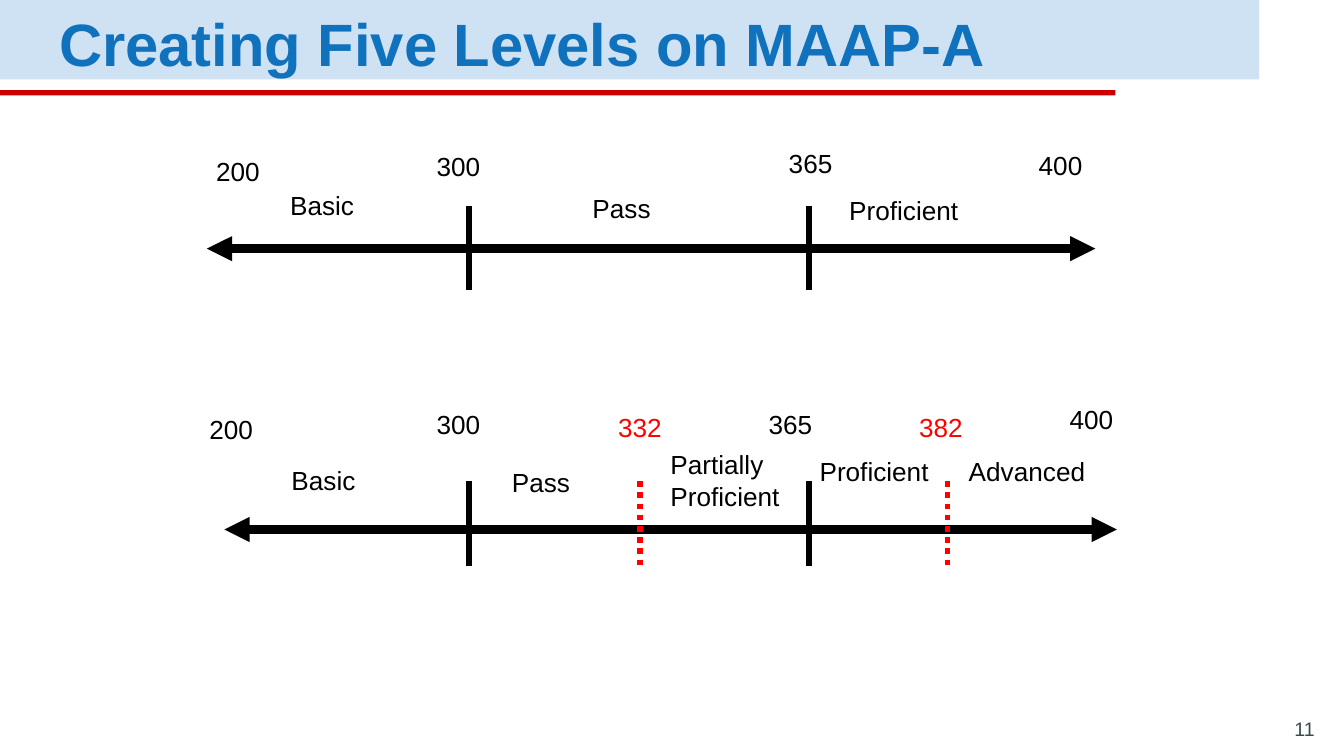
from lxml.etree import SubElement
from pptx import Presentation
from pptx.dml.color import RGBColor
from pptx.enum.dml import MSO_LINE
from pptx.enum.shapes import MSO_CONNECTOR, MSO_SHAPE
from pptx.enum.text import MSO_ANCHOR, MSO_AUTO_SIZE, PP_ALIGN
from pptx.oxml.ns import qn
from pptx.util import Emu, Pt

EMU_PER_PX = 9144
BLACK, RED = "000000", "FF0000"
LABEL_WIDTH, LABEL_HEIGHT = 91, 34
TICK_HEIGHT = 63

OLD_SCALE = {
    "axis": (154, 815, 185),
    "tick_top": 153,
    "ticks": [(349, BLACK), (602, BLACK)],
    "levels": [("Basic", 206, 136, 91), ("Pass", 431, 138, 91), ("Proficient", 622, 140, 119)],
    "scores": [("200", 151, 111, BLACK), ("300", 315, 107, BLACK),
               ("365", 577, 105, BLACK), ("400", 763, 106, BLACK)],
}
NEW_SCALE = {
    "axis": (167, 831, 394),
    "tick_top": 358,
    "ticks": [(349, BLACK), (476, RED), (602, BLACK), (705, RED)],
    "levels": [("Basic", 207, 341, 91), ("Pass", 371, 342, 91),
               ("Partially Proficient", 489, 329, 113),
               ("Proficient", 600, 334, 114), ("Advanced", 711, 334, 120)],
    "scores": [("200", 146, 303, BLACK), ("300", 315, 299, BLACK), ("332", 450, 301, RED),
               ("365", 562, 299, BLACK), ("382", 674, 301, RED), ("400", 786, 295, BLACK)],
}


def px(length):
    """Turn a length in px into EMU."""
    return Emu(length * EMU_PER_PX)


def rgb(hex_code):
    """Turn a hex string into a colour."""
    return RGBColor.from_string(hex_code)


def style_font(font, size, color, bold=False):
    """Set Arial with the given size and colour."""
    font.name, font.size, font.bold = "Arial", Pt(size), bold
    font.color.rgb = rgb(color)


def set_insets(frame, inset):
    """Give a text frame the same inset on all sides."""
    frame.margin_left = frame.margin_right = px(inset)
    frame.margin_top = frame.margin_bottom = px(inset)


def add_band(slide, top, width, height, color):
    """Add a plain band that starts at the left edge."""
    band = slide.shapes.add_shape(MSO_SHAPE.RECTANGLE, px(0), px(top), px(width), px(height))
    band.shadow.inherit = False
    band.fill.solid()
    band.fill.fore_color.rgb = rgb(color)
    band.line.fill.background()


def add_title(slide, text):
    """Fill the title placeholder and bring it in front of the bands."""
    title = slide.shapes.title
    title.left, title.top, title.width, title.height = px(34), px(3), px(903), px(49)
    frame = title.text_frame
    frame.text = text
    frame.auto_size = MSO_AUTO_SIZE.NONE
    frame.vertical_anchor = MSO_ANCHOR.MIDDLE
    set_insets(frame, 10)
    heading = frame.paragraphs[0]
    heading.alignment = PP_ALIGN.LEFT
    heading.line_spacing, heading.space_before, heading.space_after = 1.15, Pt(0), Pt(16)
    style_font(heading.font, 32, "1071BD", True)
    title.element.getparent().append(title.element)


def add_page_number(slide, number):
    """Add the page number at the bottom right."""
    frame = slide.shapes.add_textbox(px(928), px(534), px(60), px(26)).text_frame
    frame.word_wrap = True
    frame.vertical_anchor = MSO_ANCHOR.BOTTOM
    set_insets(frame, 10)
    frame.text = number
    frame.paragraphs[0].alignment = PP_ALIGN.RIGHT
    style_font(frame.paragraphs[0].font, 10.5, "3A4950")


def add_label(slide, text, left, top, width, height=LABEL_HEIGHT, color=BLACK):
    """Add a level name or a score."""
    frame = slide.shapes.add_textbox(px(left), px(top), px(width), px(height)).text_frame
    frame.word_wrap = True
    frame.auto_size = MSO_AUTO_SIZE.SHAPE_TO_FIT_TEXT
    frame.text = text
    style_font(frame.paragraphs[0].font, 14, color)


def add_line(slide, start, end, weight, color=BLACK):
    """Add a straight line without a shadow."""
    line = slide.shapes.add_connector(MSO_CONNECTOR.STRAIGHT, *map(px, start + end))
    line.line.width = Pt(weight)
    line.line.color.rgb = rgb(color)
    SubElement(line.element.spPr, qn("a:effectLst"))
    return line


def add_axis(slide, left, right, y):
    """Add a number line with an arrowhead at both ends."""
    axis = add_line(slide, (left, y), (right, y), 4.5)
    outline = axis.element.spPr.find(qn("a:ln"))
    for end in ("a:headEnd", "a:tailEnd"):
        SubElement(outline, qn(end), type="triangle")


def add_tick(slide, x, top, color):
    """Add a cut score mark, dotted when it is a new red one."""
    tick = add_line(slide, (x, top), (x, top + TICK_HEIGHT), 3, color)
    if color == RED:
        tick.line.dash_style = MSO_LINE.ROUND_DOT


def add_scale(slide, scale):
    """Add a number line with its cut scores and levels."""
    add_axis(slide, *scale["axis"])
    for x, color in scale["ticks"]:
        add_tick(slide, x, scale["tick_top"], color)
    for name, left, top, width in scale["levels"]:
        height = 57 if " " in name else LABEL_HEIGHT
        add_label(slide, name, left, top, width, height)
    for score, left, top, color in scale["scores"]:
        add_label(slide, score, left, top, LABEL_WIDTH, color=color)


def main():
    """Build and save the slide."""
    deck = Presentation()
    deck.slide_width = px(1000)
    deck.slide_height = Emu(deck.slide_width * 9 // 16)
    slide = deck.slides.add_slide(deck.slide_layouts[5])
    add_band(slide, 0, 937, 59, "CFE2F3")
    add_band(slide, 67, 830, 4, "CC0000")
    add_title(slide, "Creating Five Levels on MAAP-A")
    add_page_number(slide, "11")
    for scale in (OLD_SCALE, NEW_SCALE):
        add_scale(slide, scale)
    deck.save("out.pptx")


if __name__ == "__main__":
    main()
